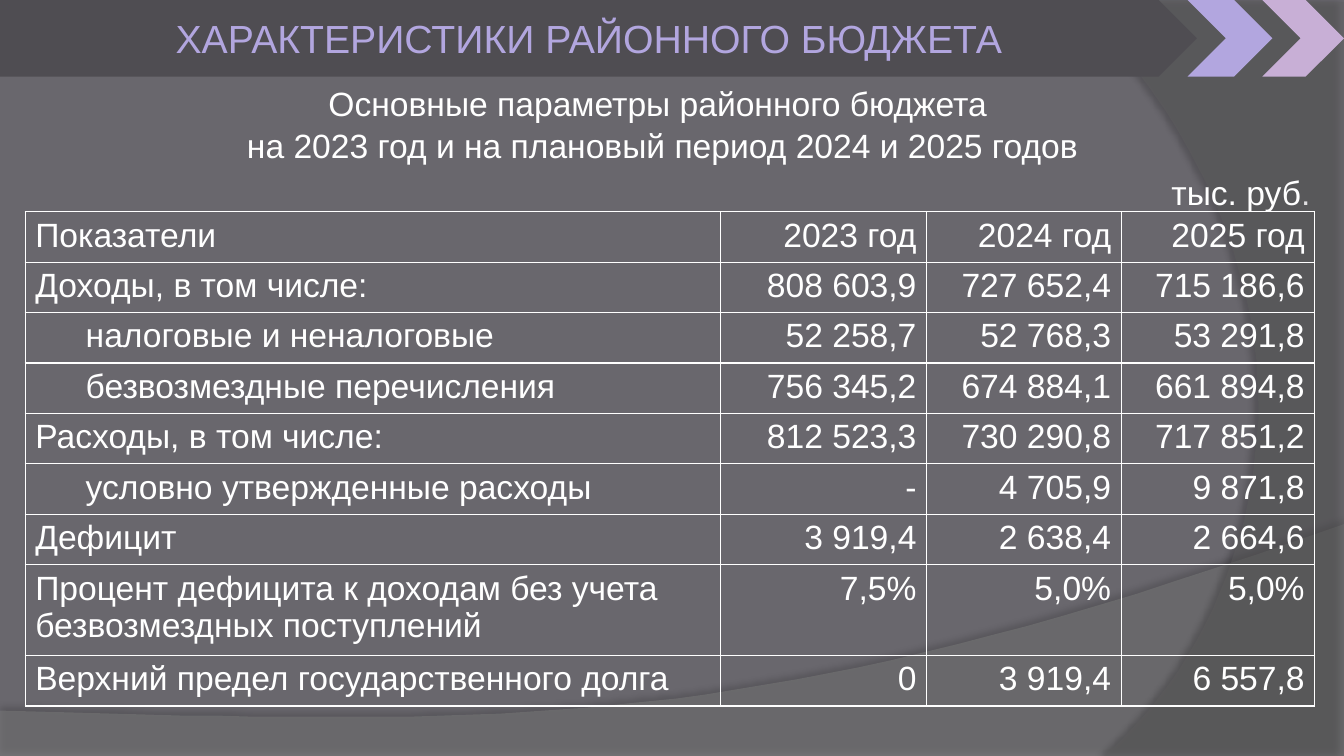
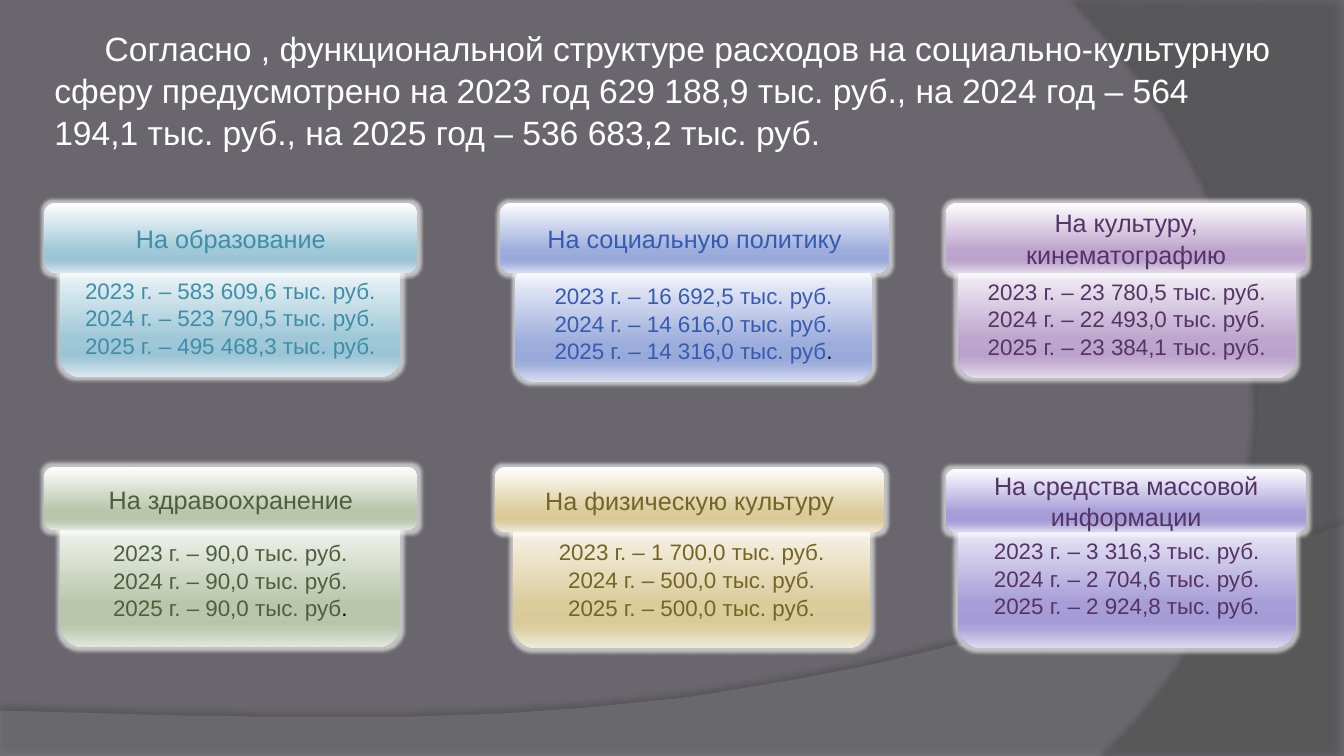
"""Build two slides on a district budget: a table and six spending cards."""
from dataclasses import dataclass

from pptx import Presentation
from pptx.dml.color import RGBColor
from pptx.enum.shapes import MSO_SHAPE
from pptx.enum.text import MSO_ANCHOR, PP_ALIGN
from pptx.oxml import parse_xml
from pptx.oxml.ns import nsdecls
from pptx.util import Pt

PX = 9144
LEFT, MID, RIGHT = PP_ALIGN.LEFT, PP_ALIGN.CENTER, PP_ALIGN.RIGHT


@dataclass(frozen=True)
class Theme:
    font: str = "Arial"
    ground: str = "69676D"
    wave: str = "7F7F7F"
    curve: str = "5E5E5E"
    band: str = "4F4D52"
    lilac: str = "B2A6DF"
    pink: str = "C8AFD6"
    white: str = "FFFFFF"
    pale: str = "E1E0E2"
    black: str = "000000"
    title: int = 28
    body: int = 24
    head: int = 18
    note: int = 16
    stops: tuple = (0, 68, 81, 86, 100)
    teal: tuple = ("3E8EA9", "FEFEFF 9EC7D7 9BC5D6 A5CAD9 DAE8EE")
    blue: tuple = ("375BB0", "FEFEFF 9CACDB 98A9DA A3B1DD D9DEF0")
    plum: tuple = ("543466", "FEFEFE BDA5CD BBA2CC C2ABD0 E4DCEA")
    green: tuple = ("4F5E3C", "FEFEFE B9C6AB B7C4A8 BEC9B1 E3E7DE")
    gold: tuple = ("756525", "FFFEFE DBCC9C D9CA98 DDCFA3 EFEAD9")
    violet: tuple = ("543466", "FEFEFF A89ED7 A59BD6 AEA5D9 DDDAEE")


T = Theme()


def write(frame, text, size=T.body, color=T.white, align=LEFT, space=1.04, left=0, first=0, dot=None):
    frame.word_wrap = True
    rows = text.split("\n")
    for i, row in enumerate(rows):
        para = frame.paragraphs[0] if i == 0 else frame.add_paragraph()
        para.alignment = align
        para.line_spacing = space
        if left or first:
            props = para._p.get_or_add_pPr()
            props.set("marL", str(left * PX))
            props.set("indent", str(first * PX))
        parts = [(row, color)]
        if dot and i == len(rows) - 1:
            parts = [(row[:-1], color), (row[-1], dot)]
        for words, tint in parts:
            run = para.add_run()
            run.text = words
            run.font.name = T.font
            run.font.size = Pt(size)
            run.font.color.rgb = RGBColor.from_string(tint)


def patch(node, xml):
    tag = xml[1:].replace(">", " ").split()[0]
    node.append(parse_xml(xml.replace(tag, f"{tag} {nsdecls('a')}", 1)))


deck = Presentation()
deck.slide_width, deck.slide_height = 1333 * PX, 750 * PX
blank = deck.slide_layouts[6]
for spare in list(blank.placeholders):
    blank.shapes.element.remove(spare.element)
blank.background.fill.solid()
blank.background.fill.fore_color.rgb = RGBColor.from_string(T.ground)
table_slide = deck.slides.add_slide(blank)
cards_slide = deck.slides.add_slide(blank)

waves = [
    ([(0, 705), (0, 750), (1333, 750)],
     [(1333, 520), (745, 729), (521, 719), (0, 705)], T.wave, 45, 35, 3.5, 270),
    ([(1333, 2), (1333, 750)],
     [(1095, 750), (1246, 619), (1357, 300), (1067, 0)], T.curve, 40, 45, 4, 180),
]
for edge, bend, tint, alpha, shade, far, turn in waves:
    dots = list(edge)
    for step in range(41):
        t = step / 40
        weights = ((1 - t) ** 3, 3 * t * (1 - t) ** 2, 3 * t * t * (1 - t), t ** 3)
        dots.append(tuple(sum(w * p[k] for w, p in zip(weights, bend)) for k in (0, 1)))
    pen = table_slide.shapes.build_freeform(*dots[0], scale=PX)
    pen.add_line_segments(dots[1:], close=True)
    wave = pen.convert_to_shape()
    props = wave.element.spPr
    patch(props, f'<a:solidFill><a:srgbClr val="{tint}"><a:alpha val="{alpha}000"/>'
                 '</a:srgbClr></a:solidFill>')
    wave.line.fill.background()
    patch(props, f'<a:effectLst><a:outerShdw blurRad="{Pt(4)}" dist="{Pt(far)}" dir="{turn * 60000}" '
                 f'rotWithShape="0"><a:srgbClr val="{T.black}"><a:alpha val="{shade}000"/>'
                 '</a:srgbClr></a:outerShdw></a:effectLst>')
    blank.shapes.element.append(wave.element)

labels = [
    (table_slide, (231, 76, 852, 91),
     "Основные параметры районного бюджета \nна 2023 год и на плановый период 2024 и 2025 годов",
     dict(align=MID)),
    (table_slide, (1152, 164, 176, 50), "тыс. руб.", dict(dot=T.pale)),
    (cards_slide, (44, 21, 1228, 131),
     "Согласно , функциональной структуре расходов на социально-культурную сферу предусмотрено "
     "на 2023 год 629 188,9 тыс. руб., на 2024 год – 564 194,1 тыс. руб., "
     "на 2025 год – 536 683,2 тыс. руб.", dict(first=50)),
]
for slide, box, text, style in labels:
    label = slide.shapes.add_textbox(*(n * PX for n in box))
    write(label.text_frame, text, **style)

bands = [
    (MSO_SHAPE.PENTAGON, 0, 1187, T.band, "ХАРАКТЕРИСТИКИ РАЙОННОГО БЮДЖЕТА"),
    (MSO_SHAPE.CHEVRON, 1178, 84, T.lilac, ""),
    (MSO_SHAPE.CHEVRON, 1252, 81, T.pink, ""),
]
for kind, left, width, tint, text in bands:
    band = table_slide.shapes.add_shape(kind, left * PX, 0, width * PX, 76 * PX)
    band.shadow.inherit = False
    band.fill.solid()
    band.fill.fore_color.rgb = RGBColor.from_string(tint)
    band.line.fill.background()
    if text:
        write(band.text_frame, text, size=T.title, color=T.lilac, align=MID, space=1)

data = [
    ("Показатели", "2023 год", "2024 год", "2025 год"),
    ("Доходы, в том числе:", "808 603,9", "727 652,4", "715 186,6"),
    ("налоговые и неналоговые", "52 258,7", "52 768,3", "53 291,8"),
    ("безвозмездные перечисления", "756 345,2", "674 884,1", "661 894,8"),
    ("Расходы, в том числе:", "812 523,3", "730 290,8", "717 851,2"),
    ("условно утвержденные расходы", "-", "4 705,9", "9 871,8"),
    ("Дефицит", "3 919,4", "2 638,4", "2 664,6"),
    ("Процент дефицита к доходам без учета безвозмездных поступлений", "7,5%", "5,0%", "5,0%"),
    ("Верхний предел государственного долга", "0", "3 919,4", "6 557,8"),
]
widths = (690, 204, 193, 192)
nested, tall = (2, 3, 5), 7
grid = table_slide.shapes.add_table(len(data), len(widths), 25 * PX, 210 * PX,
                                    sum(widths) * PX, 490 * PX).table
grid.first_row = grid.horz_banding = False
for col, width in zip(grid.columns, widths):
    col.width = width * PX
for r, row in enumerate(data):
    grid.rows[r].height = (90 if r == tall else 50) * PX
    for c, text in enumerate(row):
        cell = grid.cell(r, c)
        write(cell.text_frame, text, align=RIGHT if c else LEFT, space=1,
              left=50 if c == 0 and r in nested else 0)
        props = cell._tc.get_or_add_tcPr()
        for side in "LRTB":
            patch(props, f'<a:ln{side} w="{Pt(1)}"><a:solidFill><a:srgbClr val="{T.white}"/>'
                         f'</a:solidFill></a:ln{side}>')
        cell.fill.background()

cards = [
    (T.teal, "На образование", (44, 201, 370, 70), (60, 256, 337, 118),
     ("583 609,6", "523 790,5", "495 468,3"), None),
    (T.blue, "На социальную политику", (496, 201, 386, 70), (511, 261, 354, 118),
     ("16 692,5", "14 616,0", "14 316,0"), T.black),
    (T.plum, "На культуру, кинематографию", (938, 201, 358, 70), (950, 257, 335, 118),
     ("23 780,5", "22 493,0", "23 384,1"), None),
    (T.green, "На здравоохранение", (44, 463, 370, 63), (60, 508, 337, 134),
     ("90,0", "90,0", "90,0"), T.black),
    (T.gold, "На физическую культуру", (491, 463, 386, 65), (509, 506, 354, 137),
     ("1 700,0", "500,0", "500,0"), None),
    (T.violet, "На средства массовой информации", (938, 465, 358, 63), (950, 503, 335, 140),
     ("3 316,3", "2 704,6", "2 924,8"), None),
]
for (ink, shades), head, top, base, sums, dot in cards:
    notes = "\n".join(f"{year} г. – {n} тыс. руб." for year, n in enumerate(sums, 2023))
    for box, text, size, end in ((base, notes, T.note, dot), (top, head, T.head, None)):
        card = cards_slide.shapes.add_shape(MSO_SHAPE.ROUNDED_RECTANGLE, *(n * PX for n in box))
        props = card.element.spPr
        stops = "".join(f'<a:gs pos="{at}000"><a:srgbClr val="{shade}"/></a:gs>'
                        for at, shade in zip(T.stops, shades.split()))
        patch(props, f'<a:gradFill><a:gsLst>{stops}</a:gsLst><a:lin ang="5400000" scaled="0"/></a:gradFill>')
        card.line.fill.background()
        patch(props, f'<a:effectLst><a:glow rad="{Pt(5)}"><a:srgbClr val="{T.white}">'
                     '<a:alpha val="60000"/></a:srgbClr></a:glow></a:effectLst>')
        card.text_frame.vertical_anchor = MSO_ANCHOR.MIDDLE
        write(card.text_frame, text, size=size, color=ink, align=MID, dot=end)

deck.save("out.pptx")
